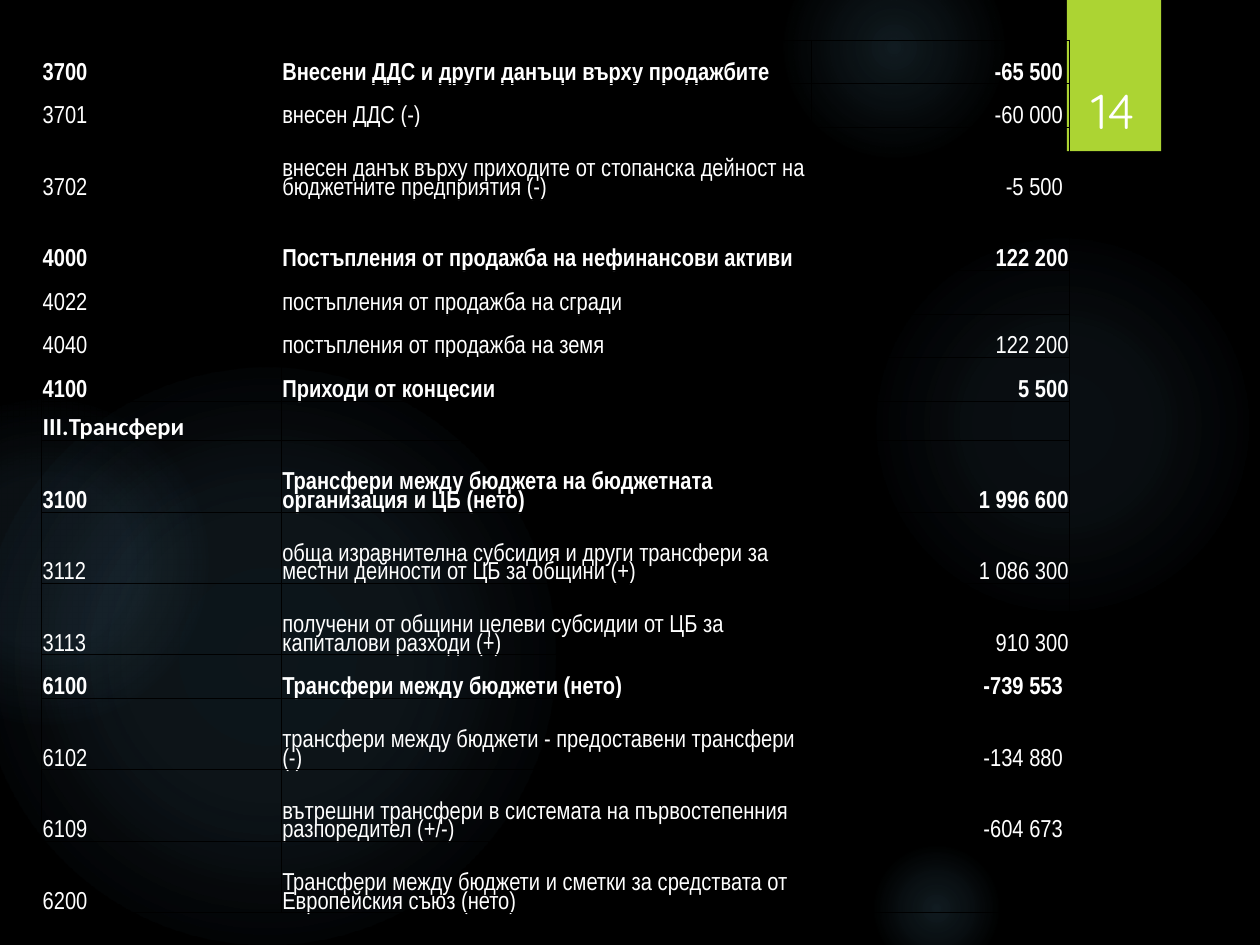
"""Build the budget slide with its table of revenues and transfers."""
import pptx
import pptx.util
import pptx.dml.color
import pptx.enum.shapes
import pptx.enum.text
import pptx.oxml
import pptx.oxml.ns

Cm, Pt = pptx.util.Cm, pptx.util.Pt
SHAPE = pptx.enum.shapes.MSO_SHAPE
ALIGN = pptx.enum.text.PP_ALIGN
BOTTOM = pptx.enum.text.MSO_ANCHOR.BOTTOM
NS = pptx.oxml.ns.nsdecls("a")

COLORS = {"back": "000000", "glow": "7AC4F0", "tab": "ACD433",
          "text": "FFFFFF", "line": "000000"}

# left, top, size, then (position, opacity) stops in percent
GLOWS = [
    (17.5, 4.65, 7.82, ((0, 7), (36, 6), (69, 0))),
    (15.8, -1.27, 4.45, ((0, 14), (36, 7), (73, 0))),
    (17.5, 16.94, 2.74, ((0, 14), (36, 7), (66, 0))),
    (-0.43, 7.42, 11.63, ((0, 11), (36, 10), (75, 0))),
    (-2.34, 8.05, 6.55, ((0, 8), (36, 8), (72, 0))),
]

WIDTHS = [4.83, 10.69, 5.2]
LOW, HIGH, HEAD = 0.88, 1.44, 0.79

# height, bold, code, name, amount
ROWS = [
    (LOW, True, "3700", "Внесени ДДС и други данъци върху продажбите", "-65 500 "),
    (LOW, False, "3701", "внесен ДДС (-)", "-60 000 "),
    (HIGH, False, "3702", "внесен данък върху приходите от стопанска дейност на "
     "бюджетните предприятия (-)", "-5 500 "),
    (HIGH, True, "4000", "Постъпления от продажба на нефинансови активи", "122 200"),
    (LOW, False, "4022", "постъпления от продажба на сгради", ""),
    (LOW, False, "4040", "постъпления от продажба на земя", "122 200"),
    (LOW, True, "4100", "Приходи от концесии", "5 500"),
    (HEAD, True, "III.Трансфери", "", ""),
    (HIGH, True, "3100", "Трансфери между бюджета на бюджетната "
     "организация и ЦБ (нето)", "1 996 600"),
    (HIGH, False, "3112", "обща изравнителна субсидия и други трансфери за "
     "местни дейности от ЦБ за общини (+)", "1 086 300"),
    (HIGH, False, "3113", "получени от общини целеви субсидии от ЦБ за "
     "капиталови разходи (+)", "910 300"),
    (LOW, True, "6100", "Трансфери между бюджети (нето)", "-739 553 "),
    (HIGH, False, "6102", "трансфери между бюджети - предоставени трансфери (-)",
     "-134 880 "),
    (HIGH, False, "6109", "вътрешни трансфери в системата на първостепенния "
     "разпоредител (+/-)", "-604 673 "),
    (HIGH, False, "6200", "Трансфери между бюджети и сметки за средствата от "
     "Европейския съюз (нето)", ""),
]


def rgb(name):
    """Return the named colour."""
    return pptx.dml.color.RGBColor.from_string(COLORS[name])


def write(frame, text, font="Arial Narrow", size=14, bold=False,
          align=ALIGN.LEFT, space=0.8):
    """Put formatted text into a text frame."""
    frame.word_wrap = True
    para = frame.paragraphs[0]
    para.alignment = align
    para.line_spacing = space
    if text:
        run = para.add_run()
        run.text = text
        run.font.name = font
        run.font.size = Pt(size)
        run.font.bold = bold
        run.font.color.rgb = rgb("text")


def add_shape(slide, kind, left, top, width, height):
    """Add a preset shape without line or shadow."""
    shape = slide.shapes.add_shape(kind, Cm(left), Cm(top), Cm(width), Cm(height))
    shape.shadow.inherit = False
    shape.line.fill.background()
    return shape


def add_glow(slide, left, top, size, stops):
    """Add a circle that fades out from its centre."""
    shape = add_shape(slide, SHAPE.OVAL, left, top, size, size)
    marks = "".join(
        f'<a:gs pos="{pos * 1000}"><a:srgbClr val="{COLORS["glow"]}">'
        f'<a:alpha val="{alpha * 1000}"/></a:srgbClr></a:gs>'
        for pos, alpha in stops)
    fill = pptx.oxml.parse_xml(
        f'<a:gradFill {NS} rotWithShape="1"><a:gsLst>{marks}</a:gsLst>'
        '<a:path path="circle"><a:fillToRect l="50000" t="50000" '
        'r="50000" b="50000"/></a:path></a:gradFill>')
    props = shape.element.spPr
    props.insert(list(props).index(props.prstGeom) + 1, fill)


def add_tab(slide, number):
    """Add the green page tab with its number."""
    tab = add_shape(slide, SHAPE.RECTANGLE, 21.51, 0, 1.9, 3.05)
    tab.fill.solid()
    tab.fill.fore_color.rgb = rgb("tab")
    box = slide.shapes.add_textbox(Cm(21.56), Cm(0.81), Cm(1.75), Cm(2.13))
    box.text_frame.vertical_anchor = BOTTOM
    write(box.text_frame, number, font="Quicksand", size=28,
          align=ALIGN.CENTER, space=1.0)


def style_cell(cell):
    """Set the margins, thin borders and empty fill of a cell."""
    cell.vertical_anchor = BOTTOM
    cell.margin_left = cell.margin_right = cell.margin_top = Cm(0.02)
    cell.margin_bottom = 0
    props = cell._tc.get_or_add_tcPr()
    for side in "LRTB":
        props.append(pptx.oxml.parse_xml(
            f'<a:ln{side} {NS} w="{Pt(0.5)}"><a:solidFill>'
            f'<a:srgbClr val="{COLORS["line"]}"/></a:solidFill></a:ln{side}>'))
    cell.fill.background()


def add_budget(slide):
    """Add the budget table."""
    frame = slide.shapes.add_table(
        len(ROWS), len(WIDTHS), Cm(0.84), Cm(0.81),
        Cm(sum(WIDTHS)), Cm(sum(row[0] for row in ROWS)))
    table = frame.table
    table.first_row = table.horz_banding = False
    for col, width in zip(table.columns, WIDTHS):
        col.width = Cm(width)
    for i, (height, bold, *texts) in enumerate(ROWS):
        table.rows[i].height = Cm(height)
        font = "Calibri" if height == HEAD else "Arial Narrow"
        for j, text in enumerate(texts):
            cell = table.cell(i, j)
            style_cell(cell)
            write(cell.text_frame, text, font=font, bold=bold,
                  align=ALIGN.RIGHT if j == 2 else ALIGN.LEFT)


def main():
    """Build and save the slide."""
    deck = pptx.Presentation()
    deck.slide_width, deck.slide_height = Cm(25.4), Cm(19.05)
    slide = deck.slides.add_slide(deck.slide_layouts[6])
    slide.background.fill.solid()
    slide.background.fill.fore_color.rgb = rgb("back")
    for glow in GLOWS:
        add_glow(slide, *glow)
    add_tab(slide, "14")
    add_budget(slide)
    deck.save("out.pptx")


if __name__ == "__main__":
    main()
